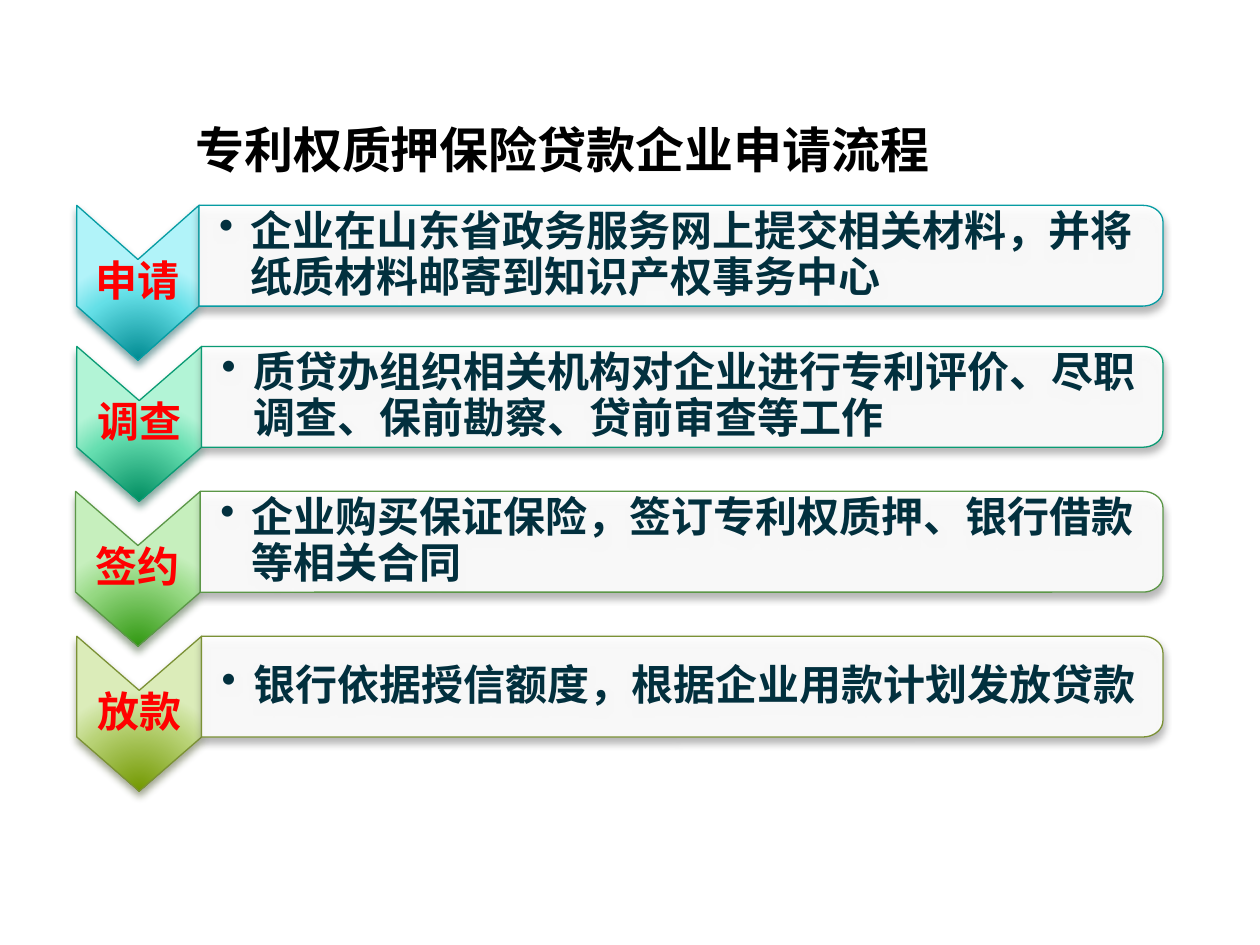
import math
from dataclasses import dataclass

import pptx
import pptx.dml.color
import pptx.enum.text
import pptx.oxml
import pptx.oxml.ns
import pptx.util
from pptx.util import Inches


@dataclass(frozen=True)
class Theme:
    font: str = "Noto Sans CJK SC"
    title_size: int = 28
    body_size: int = 24
    title: str = "000000"
    step: str = "FF0000"
    body: str = "02303E"
    panel: str = "FFFFFF"
    panel_shadow: str = "5A5A5A"


theme = Theme()
namespace = pptx.oxml.ns.nsdecls("a")
ALIGN = pptx.enum.text.PP_ALIGN
ANCHOR = pptx.enum.text.MSO_ANCHOR


def write_text(shape, text, *, size, color, align, anchor, insets,
               line_spacing=1.0, bullet=False, wrap=True):
    frame = shape.text_frame
    frame.auto_size = pptx.enum.text.MSO_AUTO_SIZE.NONE
    frame.word_wrap = wrap
    frame.vertical_anchor = anchor
    (frame.margin_left, frame.margin_top,
     frame.margin_right, frame.margin_bottom) = [Inches(inset) for inset in insets]
    paragraph = frame.paragraphs[0]
    paragraph.alignment = align
    paragraph.line_spacing = line_spacing
    paragraph.space_before = pptx.util.Pt(0)
    if bullet:
        properties = paragraph._p.get_or_add_pPr()
        properties.set("marL", str(Inches(0.25)))
        properties.set("indent", str(Inches(-0.25)))
        properties.append(pptx.oxml.parse_xml(f'<a:buChar {namespace} char="•"/>'))
    run = paragraph.add_run()
    run.text = text
    run.font.size = pptx.util.Pt(size)
    run.font.bold = True
    run.font.name = theme.font
    run.font.color.rgb = pptx.dml.color.RGBColor.from_string(color)
    # Chinese text takes the East Asian font
    run.font._element.append(
        pptx.oxml.parse_xml(f'<a:ea {namespace} typeface="{theme.font}"/>'))


def draw_outline(points, *, fill_xml, line, shadow):
    corners = [(Inches(x), Inches(y)) for x, y in points]
    builder = slide.shapes.build_freeform(*corners[0])
    builder.add_line_segments(corners[1:], close=True)
    shape = builder.convert_to_shape()
    shape.fill.solid()
    properties = shape._element.spPr
    solid = properties.find(pptx.oxml.ns.qn("a:solidFill"))
    properties.replace(solid, pptx.oxml.parse_xml(fill_xml))
    shape.line.color.rgb = pptx.dml.color.RGBColor.from_string(line)
    shape.line.width = pptx.util.Pt(0.75)
    shape.shadow.inherit = False
    properties.find(pptx.oxml.ns.qn("a:effectLst")).append(pptx.oxml.parse_xml(
        f'<a:outerShdw {namespace} blurRad="{pptx.util.Pt(4.5)}" dist="{pptx.util.Pt(3)}" '
        f'dir="5400000" rotWithShape="0"><a:srgbClr val="{shadow}">'
        f'<a:alpha val="48000"/></a:srgbClr></a:outerShdw>'))
    return shape


presentation = pptx.Presentation()
presentation.slide_width = Inches(10)
presentation.slide_height = Inches(7.5)
slide = presentation.slides.add_slide(presentation.slide_layouts[5])

# Title
title = slide.shapes.title
title.left, title.top = Inches(1.45), Inches(0.9)
title.width, title.height = Inches(6.12), Inches(0.57)
write_text(title, "专利权质押保险贷款企业申请流程", size=theme.title_size, color=theme.title,
           align=ALIGN.LEFT, anchor=ANCHOR.TOP, insets=(0.1, 0.05, 0.1, 0.05), wrap=False)

# Steps: name, description, left, seam, top, gradient from dark to light, line, shadow
steps = [
    ("申请", "企业在山东省政务服务网上提交相关材料，并将纸质材料邮寄到知识产权事务中心",
     0.61, 1.58, 1.63, ("008A91", "64DFE7", "B1F3F9"), "069CA3", "024B4E"),
    ("调查", "质贷办组织相关机构对企业进行专利评价、尽职调查、保前勘察、贷前审查等工作",
     0.61, 1.6, 2.75, ("008C60", "65DEB0", "B2F4D6"), "0A9B74", "044A37"),
    ("签约", "企业购买保证保险，签订专利权质押、银行借款等相关合同",
     0.6, 1.59, 3.9, ("319811", "95D882", "C6EFBD"), "5B9747", "2B4821"),
    ("放款", "银行依据授信额度，根据企业用款计划发放贷款",
     0.61, 1.6, 5.05, ("729800", "B8D275", "DBECB9"), "7B9135", "3A4519"),
]
panel_right, panel_height, notch = 9.23, 0.8, 0.43
radius_x, radius_y = 0.16, 0.13
panel_fill = (f'<a:solidFill {namespace}><a:srgbClr val="{theme.panel}">'
              f'<a:alpha val="90000"/></a:srgbClr></a:solidFill>')
quarter = [math.radians(angle) for angle in range(0, 91, 10)]

for name, description, left, seam, top, gradient, line, shadow in steps:
    bottom, middle = top + panel_height, (left + seam) / 2

    # Downward chevron
    stops = "".join(f'<a:gs pos="{position}000"><a:srgbClr val="{color}"/></a:gs>'
                    for position, color in zip((0, 68, 100), gradient))
    chevron_fill = (f'<a:gradFill {namespace} rotWithShape="1"><a:gsLst>{stops}</a:gsLst>'
                    f'<a:path path="circle"><a:fillToRect l="50000" t="130000" '
                    f'r="50000" b="-30000"/></a:path></a:gradFill>')
    chevron = draw_outline(
        [(seam, top), (seam, bottom), (middle, bottom + notch),
         (left, bottom), (left, top), (middle, top + notch)],
        fill_xml=chevron_fill, line=line, shadow=shadow)
    write_text(chevron, name, size=theme.body_size, color=theme.step, align=ALIGN.CENTER,
               anchor=ANCHOR.MIDDLE, insets=(0.01, 0.42, 0.01, 0.42), line_spacing=0.9)

    # Panel with rounded right corners
    center_x = panel_right - radius_x
    upper = [(center_x + radius_x * math.sin(angle),
              top + radius_y * (1 - math.cos(angle))) for angle in quarter]
    lower = [(x, top + bottom - y) for x, y in reversed(upper)]
    panel = draw_outline([(seam, top), *upper, *lower, (seam, bottom)],
                         fill_xml=panel_fill, line=line, shadow=theme.panel_shadow)
    write_text(panel, description, size=theme.body_size, color=theme.body, align=ALIGN.LEFT,
               anchor=ANCHOR.MIDDLE, insets=(0.16, 0.05, 0.05, 0.05),
               line_spacing=0.9, bullet=True)

presentation.save("out.pptx")
